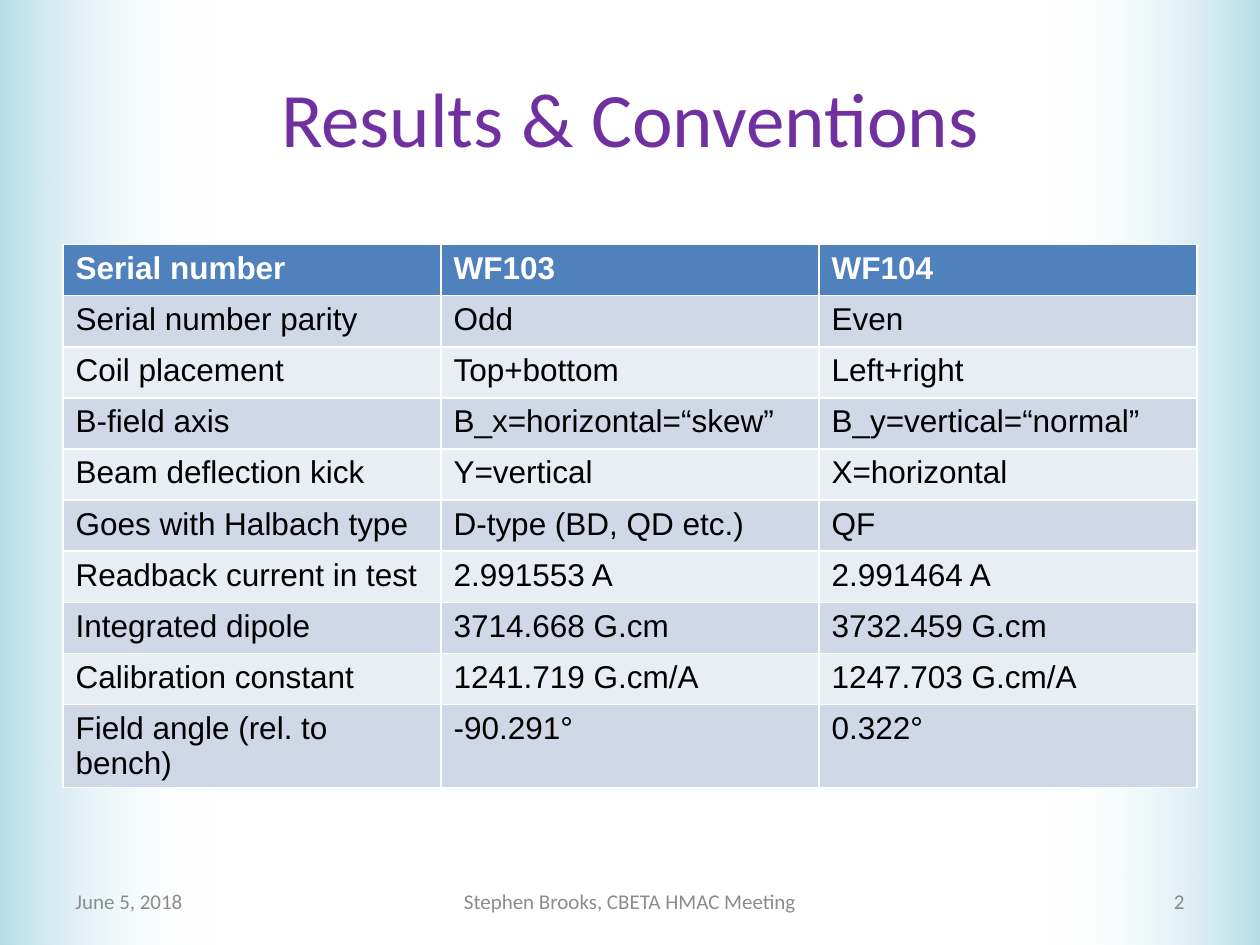
"""Build the slide of magnet test results and conventions."""
from pptx import Presentation
from pptx.dml.color import RGBColor
from pptx.enum.shapes import MSO_SHAPE
from pptx.enum.text import MSO_ANCHOR, PP_ALIGN
from pptx.oxml.ns import qn
from pptx.util import Pt
from lxml import etree

RECT = MSO_SHAPE.RECTANGLE
MIDDLE = MSO_ANCHOR.MIDDLE
LEFT, CENTER, RIGHT = PP_ALIGN.LEFT, PP_ALIGN.CENTER, PP_ALIGN.RIGHT


def color(code):
    return RGBColor.from_string(code)


def write(frame, text, tint, align=LEFT, **form):
    para = frame.paragraphs[0]
    para.alignment = align
    run = para.add_run()
    run.text = text
    run.font.color.rgb = color(tint)
    for key, value in form.items():
        setattr(run.font, key, value)


deck = Presentation()
deck.slide_width, deck.slide_height = Pt(720), Pt(540)
slide = deck.slides.add_slide(deck.slide_layouts[5])
shapes = slide.shapes
title = shapes.title

for left, turn in ((598.32, 180), (0, 0)):
    band = shapes.add_shape(RECT, Pt(left), 0, Pt(121.68), Pt(540))
    band.rotation = turn
    band.shadow.inherit = False
    band.line.fill.background()
    band.fill.gradient()
    band.fill.gradient_angle = 0
    for stop, place, tint in zip(band.fill.gradient_stops, (0, 1), ("B7DEE8", "FFFFFF")):
        stop.position = place
        stop.color.rgb = color(tint)
    clear = list(band.element.spPr.iter(qn("a:srgbClr")))[-1]
    etree.SubElement(clear, qn("a:alpha"), val="0")
    title.element.addprevious(band.element)

title.left, title.top, title.width, title.height = Pt(36), Pt(21.6), Pt(648), Pt(90)
title.text_frame.vertical_anchor = MIDDLE
write(title.text_frame, "Results & Conventions", "7030A0", CENTER,
      size=Pt(44), name="Calibri")

rows = (
    ("Serial number", "WF103", "WF104"),
    ("Serial number parity", "Odd", "Even"),
    ("Coil placement", "Top+bottom", "Left+right"),
    ("B-field axis", "B_x=horizontal=“skew”", "B_y=vertical=“normal”"),
    ("Beam deflection kick", "Y=vertical", "X=horizontal"),
    ("Goes with Halbach type", "D-type (BD, QD etc.)", "QF"),
    ("Readback current in test", "2.991553 A", "2.991464 A"),
    ("Integrated dipole", "3714.668 G.cm", "3732.459 G.cm"),
    ("Calibration constant", "1241.719 G.cm/A", "1247.703 G.cm/A"),
    ("Field angle (rel. to bench)", "-90.291°", "0.322°"),
)
table = shapes.add_table(len(rows), 3, Pt(36), Pt(139.8), Pt(648), Pt(292)).table
for i, row in enumerate(rows):
    head = i == 0
    fill = "4F81BD" if head else ("E9EDF4", "D0D8E8")[i % 2]
    for j, text in enumerate(row):
        cell = table.cell(i, j)
        cell.fill.solid()
        cell.fill.fore_color.rgb = color(fill)
        write(cell.text_frame, text, "FFFFFF" if head else "000000",
              size=Pt(18), name="Arial", bold=head)

for left, width, text, tint, align in (
    (36, 168, "June 5, 2018", "8C8C8C", LEFT),
    (246, 228, "Stephen Brooks, CBETA HMAC Meeting", "8C8C8C", CENTER),
    (516, 168, "2", "898989", RIGHT),
):
    frame = shapes.add_textbox(Pt(left), Pt(500.5), Pt(width), Pt(28.75)).text_frame
    frame.word_wrap = True
    frame.vertical_anchor = MIDDLE
    write(frame, text, tint, align, size=Pt(12), name="Calibri")

deck.save("out.pptx")
